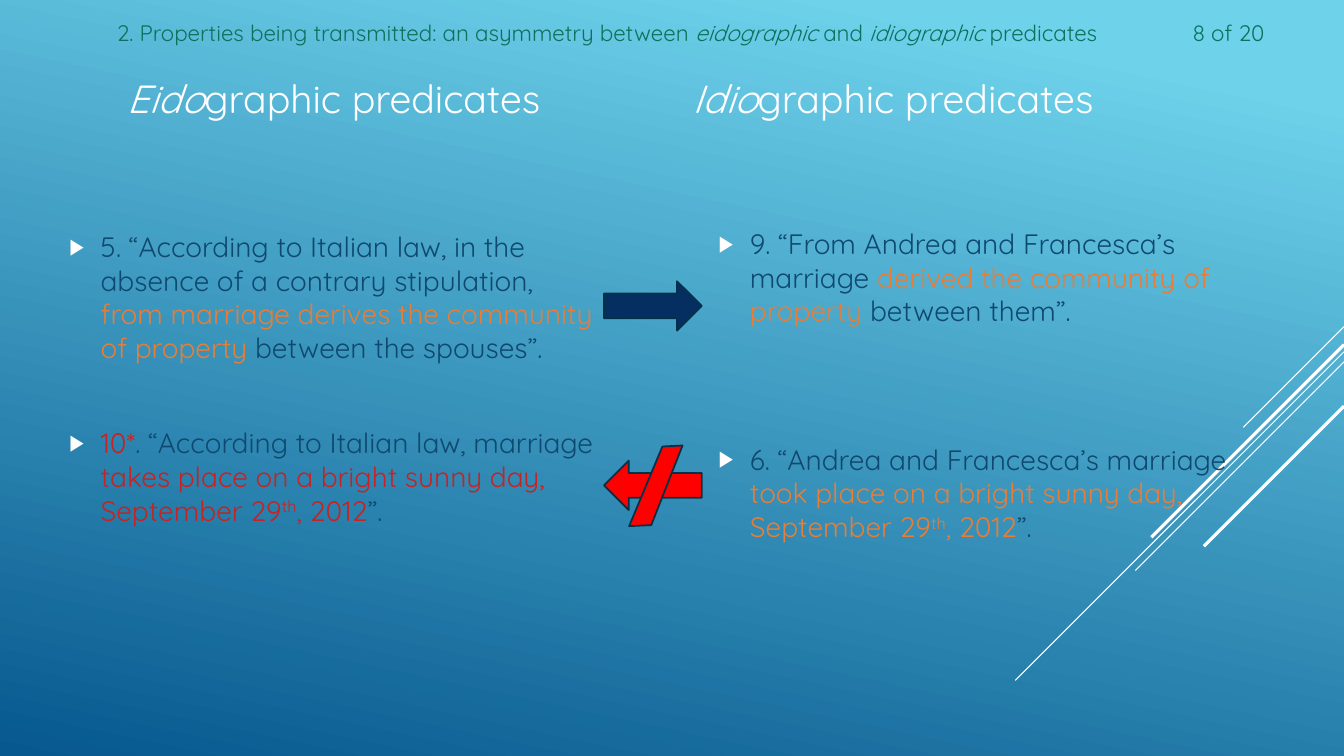
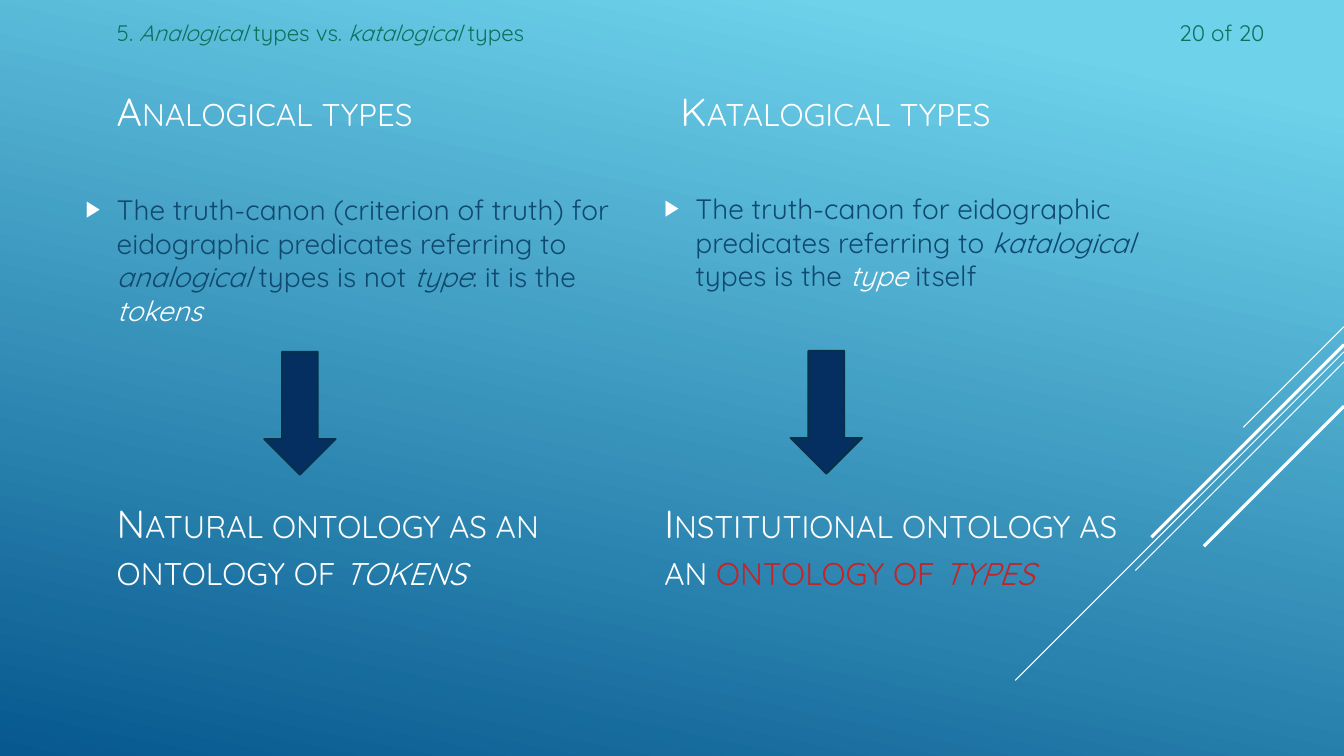
from lxml.etree import SubElement
from pptx import Presentation
from pptx.dml.color import RGBColor
from pptx.enum.shapes import MSO_CONNECTOR as Connector, MSO_SHAPE as Shape
from pptx.enum.text import MSO_ANCHOR as Anchor, MSO_AUTO_SIZE as AutoSize, PP_ALIGN as Align
from pptx.oxml.ns import qn
from pptx.util import Inches, Pt

FONT = "Quicksand"
WHITE, INK, ORANGE, CRIMSON, GREEN = "FFFFFF", "0F496F", "E87D37", "C62324", "0F705D"
NAVY, RED, OUTLINE = "052F61", "FF0000", "043148"
SKY, DEEP = "6ED2EB", "06588E"
SLIDE_WIDTH, SLIDE_HEIGHT = 13.33, 7.5
HEADING_WIDTH, BODY_WIDTH = 5.1, 5.4
ARROW_LENGTH, ARROW_BREADTH = 0.97, 0.49
STRIPES = [(3.24, 1.0, 0.75), (3.49, 3.26, 0.75), (3.59, 2.07, 0.75),
           (3.42, 1.91, 2.25), (4.03, 1.39, 2.25)]
ITALIC = {"italic": True}


def colour(value):
    """Turn a hex string into a colour."""
    return RGBColor.from_string(value)


def add_run(paragraph, text, size=20, color=INK, italic=False, small_caps=False, raised=False):
    """Add formatted text to a paragraph."""
    run = paragraph.add_run()
    run.text = text
    run.font.name, run.font.size, run.font.italic = FONT, Pt(size), italic
    run.font.color.rgb = colour(color)
    properties = run.font._element
    if small_caps:
        properties.set("cap", "small")
    if raised:
        properties.set("baseline", "30000")


def add_runs(paragraph, runs, **base):
    """Add runs given as plain strings or as (text, format) pairs."""
    for item in runs:
        text, extra = (item, {}) if isinstance(item, str) else item
        add_run(paragraph, text, **{**base, **extra})


def add_box(slide, box, anchor=Anchor.TOP):
    """Add an empty wrapping text box and return its text frame."""
    frame = slide.shapes.add_textbox(*map(Inches, box)).text_frame
    frame.word_wrap, frame.vertical_anchor = True, anchor
    return frame


def add_bullet(paragraph):
    """Give a paragraph the hanging white triangle."""
    properties = paragraph._p.get_or_add_pPr()
    properties.set("marL", str(Inches(0.31)))
    properties.set("indent", str(-Inches(0.31)))
    SubElement(SubElement(properties, qn("a:buClr")), qn("a:srgbClr"), val=WHITE)
    SubElement(properties, qn("a:buSzPct"), val="80000")
    SubElement(properties, qn("a:buFont"), typeface="Arial")
    SubElement(properties, qn("a:buChar"), char="▶")


def add_heading(slide, left, top, runs, height=0.63, **base):
    """Place a white heading that sits on the bottom of its box."""
    frame = add_box(slide, (left, top, HEADING_WIDTH, height), Anchor.BOTTOM)
    paragraph = frame.paragraphs[0]
    paragraph.space_before, paragraph.space_after = Pt(5.6), Pt(6)
    add_runs(paragraph, runs, size=28, color=WHITE, **base)


def add_body(slide, left, top, height, items, gap=4):
    """Place bulleted items, with the gap in points before each later one."""
    frame = add_box(slide, (left, top, BODY_WIDTH, height))
    for index, runs in enumerate(items):
        paragraph = frame.add_paragraph() if index else frame.paragraphs[0]
        paragraph.space_before, paragraph.space_after = Pt(gap if index else 4), Pt(6)
        add_bullet(paragraph)
        add_runs(paragraph, runs)


def paint(shape, fill):
    """Apply the flat fill and dark outline of the arrows."""
    shape.shadow.inherit = False
    shape.fill.solid()
    shape.fill.fore_color.rgb = colour(fill)
    shape.line.color.rgb, shape.line.width = colour(OUTLINE), Pt(1.25)


def add_arrow(shapes, kind, box, fill=NAVY, rotation=0):
    """Add a block arrow."""
    arrow = shapes.add_shape(kind, *map(Inches, box))
    arrow.rotation = rotation
    paint(arrow, fill)


def add_barred_arrow(slide, left, top):
    """Add a red left-pointing arrow struck through by a slanted bar."""
    shapes = slide.shapes.add_group_shape().shapes
    add_arrow(shapes, Shape.RIGHT_ARROW, (left, top, ARROW_LENGTH, ARROW_BREADTH), RED, 180)
    corners = [(Inches(left + x), Inches(top + y))
               for x, y in [(0.25, 0.65), (0.58, -0.14), (0.78, -0.15), (0.47, 0.64)]]
    builder = shapes.build_freeform(*corners[0])
    builder.add_line_segments(corners[1:], close=True)
    paint(builder.convert_to_shape(), RED)


def add_stripes(slide):
    """Draw the diagonal lines that leave the right edge at 45 degrees."""
    for top, reach, width in STRIPES:
        ends = (SLIDE_WIDTH, top, SLIDE_WIDTH - reach, top + reach)
        line = slide.shapes.add_connector(Connector.STRAIGHT, *map(Inches, ends))
        line.line.color.rgb, line.line.width = colour(WHITE), Pt(width)
        SubElement(line._element.spPr, qn("a:effectLst"))


def add_header(slide, section, number):
    """Write the section name and the page count along the top."""
    parts = [(1.06, 10.99, Align.LEFT, section), (11.06, 1.58, Align.RIGHT, [f"{number} of 20"])]
    for left, width, align, runs in parts:
        frame = add_box(slide, (left, 0.14, width, 0.37))
        frame.auto_size = AutoSize.SHAPE_TO_FIT_TEXT
        frame.paragraphs[0].alignment = align
        add_runs(frame.paragraphs[0], runs, size=16, color=GREEN)


def new_slide(presentation, section, number):
    """Start a slide with the shared stripes and header."""
    slide = presentation.slides.add_slide(presentation.slide_layouts[6])
    add_stripes(slide)
    add_header(slide, section, number)
    return slide


def set_background(master):
    """Give every slide the blue gradient."""
    fill = master.background.fill
    fill.gradient()
    fill.gradient_angle = 258
    for stop, position, value in zip(fill.gradient_stops, (0.1, 1), (SKY, DEEP)):
        stop.position, stop.color.rgb = position, colour(value)


def dated(text, color):
    """Return the runs of a coloured phrase that ends with the wedding date."""
    tint = {"color": color}
    return [(text + " on a bright sunny day, September 29", tint),
            ("th", {**tint, "raised": True}), (", 2012", tint), "”."]


def build_predicates(presentation):
    """Build the slide on eidographic and idiographic predicates."""
    section = ["2. Properties being transmitted: an asymmetry between ", ("eidographic", ITALIC),
               " and ", ("idiographic ", ITALIC), "predicates"]
    slide = new_slide(presentation, section, 8)
    for left, prefix in [(1.16, "Eido"), (6.77, "Idio")]:
        add_heading(slide, left, 0.62, [(prefix, ITALIC), "graphic predicates"])
    orange = {"color": ORANGE}
    add_body(slide, 0.59, 2.23, 3.31, [
        ["5. “According to Italian law, in the absence of a contrary stipulation, ",
         ("from marriage derives the community of property ", orange),
         "between the spouses”."],
        [("10*", {"color": CRIMSON}), ". “According to Italian law, marriage ",
         *dated("takes place", CRIMSON)],
    ], gap=38)
    add_body(slide, 7.03, 2.2, 3.56, [
        ["9. “From Andrea and Francesca’s marriage ",
         ("derived the community of property ", orange), "between them”."],
        ["6. “Andrea and Francesca’s marriage ", *dated("took place", ORANGE)],
    ], gap=76)
    add_arrow(slide.shapes, Shape.RIGHT_ARROW, (5.99, 2.79, ARROW_LENGTH, ARROW_BREADTH))
    add_barred_arrow(slide, 5.99, 4.57)


def add_type_column(slide, heading_left, body_left, body_top, arrow_left, closing_left,
                    heading, body, closing):
    """Stack a heading, its bullet, a down arrow and the conclusion."""
    add_heading(slide, heading_left, 0.75, [heading], small_caps=True)
    add_body(slide, body_left, body_top, 1.6, [body])
    add_arrow(slide.shapes, Shape.DOWN_ARROW, (arrow_left, body_top + 1.63, 0.71, 1.22))
    add_heading(slide, closing_left, 4.82, closing, height=1.12, small_caps=True)


def build_types(presentation):
    """Build the slide on analogical and katalogical types."""
    section = ["5. ", ("Analogical ", ITALIC), "types vs. ", ("katalogical ", ITALIC), "types"]
    slide = new_slide(presentation, section, 20)
    white_italic = {"color": WHITE, "italic": True}
    add_type_column(
        slide, 1.06, 0.75, 1.86, 2.62, 1.06, "Analogical types",
        ["The truth-canon (criterion of truth) for eidographic predicates referring to ",
         ("analogical ", ITALIC), "types is not ", ("type", ITALIC), ": it is the ",
         ("tokens", white_italic)],
        ["Natural ontology as an ontology of ", ("tokens", ITALIC)])
    add_type_column(
        slide, 6.65, 6.49, 1.85, 7.84, 6.49, "Katalogical types",
        ["The truth-canon for eidographic predicates referring to ",
         ("katalogical ", ITALIC), "types is the ", ("type ", white_italic), "itself"],
        ["Institutional ontology as an ", ("ontology of ", {"color": CRIMSON}),
         ("types", {"color": CRIMSON, "italic": True})])


def main():
    """Build and save the presentation."""
    presentation = Presentation()
    presentation.slide_width, presentation.slide_height = Inches(SLIDE_WIDTH), Inches(SLIDE_HEIGHT)
    set_background(presentation.slide_master)
    build_predicates(presentation)
    build_types(presentation)
    presentation.save("out.pptx")


if __name__ == "__main__":
    main()
